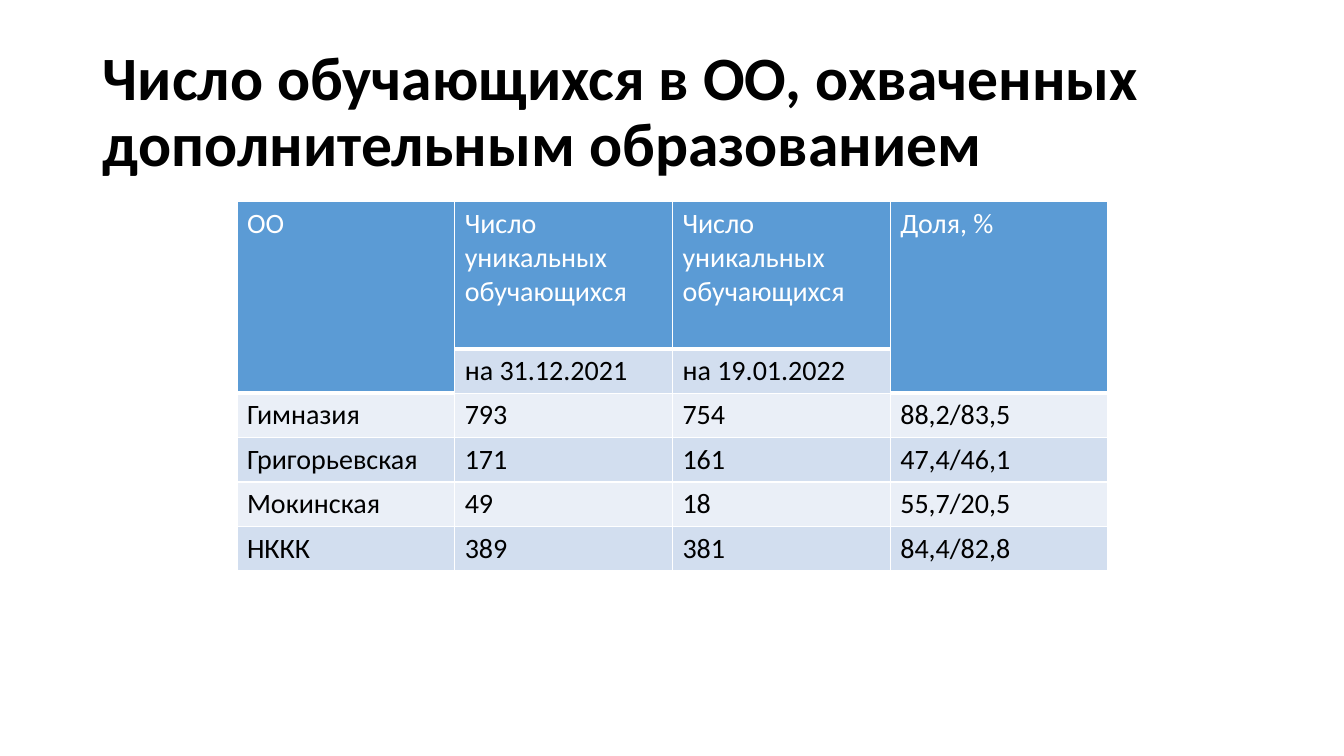
import pptx
import pptx.util
import pptx.dml.color
import pptx.enum.text
import lxml.etree

TITLE = "Число обучающихся в ОО, охваченных дополнительным образованием"
COUNT = "Число уникальных обучающихся"
ROWS = [
    ("ОО", COUNT, COUNT, "Доля, %"),
    ("", "на 31.12.2021", "на 19.01.2022", ""),
    ("Гимназия", "793", "754", "88,2/83,5"),
    ("Григорьевская", "171", "161", "47,4/46,1"),
    ("Мокинская", "49", "18", "55,7/20,5"),
    ("НККК", "389", "381", "84,4/82,8"),
]
TALL = (0, 3)  # header columns that span two rows
FONT, BLACK, WHITE, HEAD = "Calibri", "000000", "FFFFFF", "5B9BD5"
BANDS = ("EAEFF7", "D2DEEF")
COL_W, HEAD_H, ROW_H = 2.16, 1.46, 0.44
LEFT, TOP = 2.35, 2
EDGES = ("lnL", "lnR", "lnT", "lnB")
NS = "http://schemas.openxmlformats.org/drawingml/2006/main"

inch = pptx.util.Inches


def paint(hue):
    return pptx.dml.color.RGBColor.from_string(hue)


def write(frame, text, size, hue, bold=False):
    par = frame.paragraphs[0]
    run = par.add_run()
    run.text = text
    run.font.name = FONT
    run.font.size = pptx.util.Pt(size)
    run.font.bold = bold
    run.font.color.rgb = paint(hue)
    return par


def border(cell, low):
    props = cell._tc.get_or_add_tcPr()
    for spot, edge in enumerate(EDGES):
        width = low if edge == "lnB" else 1
        line = lxml.etree.Element(f"{{{NS}}}{edge}", w=str(pptx.util.Pt(width)))
        fill = lxml.etree.SubElement(line, f"{{{NS}}}solidFill")
        lxml.etree.SubElement(fill, f"{{{NS}}}srgbClr", val=WHITE)
        props.insert(spot, line)


deck = pptx.Presentation()
deck.slide_width, deck.slide_height = inch(13.33), inch(7.5)
slide = deck.slides.add_slide(deck.slide_layouts[5])

# Title
title = slide.shapes.title
title.left, title.top = inch(0.92), inch(0.4)
title.width, title.height = inch(11.5), inch(1.45)
title.text_frame.word_wrap = True
title.text_frame.vertical_anchor = pptx.enum.text.MSO_ANCHOR.MIDDLE
par = write(title.text_frame, TITLE, 44, BLACK, True)
par.alignment = pptx.enum.text.PP_ALIGN.LEFT
par.line_spacing = 0.9

# Table grid
high = [HEAD_H] + [ROW_H] * (len(ROWS) - 1)
wide = len(ROWS[0])
grid = slide.shapes.add_table(len(ROWS), wide, inch(LEFT), inch(TOP),
                              inch(COL_W * wide), inch(sum(high))).table
for col in grid.columns:
    col.width = inch(COL_W)
for row, size in zip(grid.rows, high):
    row.height = inch(size)
for c in TALL:
    grid.cell(0, c).merge(grid.cell(1, c))

# Cells
for r, texts in enumerate(ROWS):
    for c, text in enumerate(texts):
        cell = grid.cell(r, c)
        head = r == 0 or (r == 1 and c in TALL)
        cell.fill.solid()
        cell.fill.fore_color.rgb = paint(HEAD if head else BANDS[r % 2])
        border(cell, 3 if head else 1)
        if text:
            write(cell.text_frame, text, 20, WHITE if head else BLACK)

deck.save("out.pptx")
